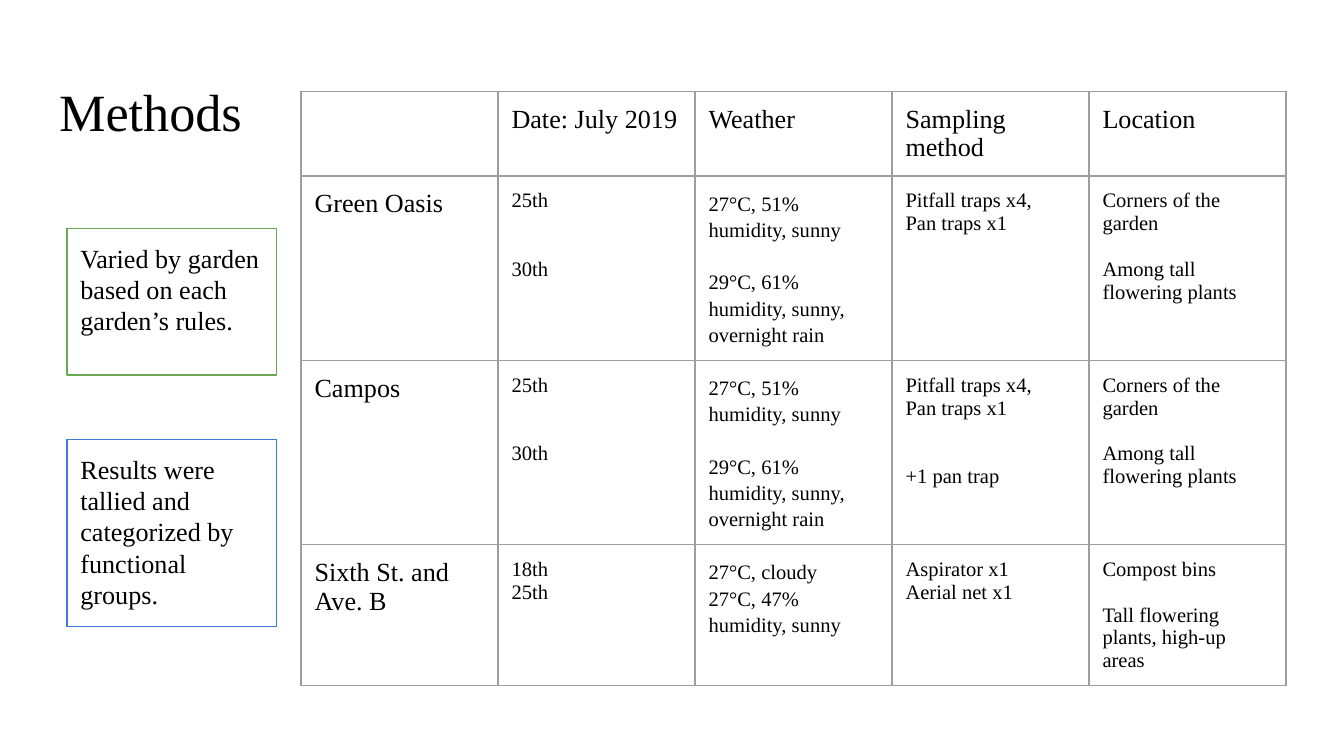
"""Build the Methods slide: a title, two notes and a table of garden sampling."""
from lxml import etree
from pptx import Presentation
from pptx import util as u
from pptx.dml.color import RGBColor
from pptx.enum import shapes, text
from pptx.oxml import ns

FONT = "Times New Roman"
BLACK = RGBColor(0x00, 0x00, 0x00)
GRAY = RGBColor(0x9E, 0x9E, 0x9E)
GREEN = RGBColor(0x6A, 0xA8, 0x4F)
BLUE = RGBColor(0x3C, 0x78, 0xD8)

TITLE = "Methods"
NOTES = [
    ("Varied by garden based on each garden’s rules.", 1.7, 1.09, GREEN),
    ("Results were tallied and categorized by functional groups.", 3.27, 1.39, BLUE),
]
HEADERS = ["", "Date: July 2019", "Weather", "Sampling method", "Location"]
DATES = [("25th", 0), ("30th", 2)]
WEATHER = [("27°C, 51% humidity, sunny", 0), ("29°C, 61% humidity, sunny, overnight rain", 1)]
TRAPS = [("Pitfall traps x4,", 0), ("Pan traps x1", 0)]
PLACES = [("Corners of the garden", 0), ("Among tall flowering plants", 1)]
GARDENS = [
    ("Green Oasis", DATES, WEATHER, TRAPS, PLACES),
    ("Campos", DATES, WEATHER, TRAPS + [("+1 pan trap", 2)], PLACES),
    (
        "Sixth St. and Ave. B",
        [("18th", 0), ("25th", 0)],
        [("27°C, cloudy", 0), ("27°C, 47% humidity, sunny", 0)],
        [("Aspirator x1", 0), ("Aerial net x1", 0)],
        [("Compost bins", 0), ("Tall flowering plants, high-up areas", 1)],
    ),
]
SLIDE_WIDTH = 10
SLIDE_HEIGHT = SLIDE_WIDTH * 9 / 16
TABLE_WIDTH = 7.33
ROW_HEIGHTS = [0.54, 1.3, 1.3, 0.73]
WEATHER_COLUMN = 2
LINE_RATIO = 1.11


def write(frame, content, size=14, spacing=1.0):
    """Write a string, or (string, skipped lines) pairs, as paragraphs."""
    lines = [(content, 0)] if isinstance(content, str) else content
    for index, (words, skipped) in enumerate(lines):
        paragraph = frame.add_paragraph() if index else frame.paragraphs[0]
        paragraph.alignment = text.PP_ALIGN.LEFT
        paragraph.line_spacing = spacing
        paragraph.space_before = u.Pt(round(skipped * size * LINE_RATIO * spacing, 1))
        run = paragraph.add_run()
        run.text = words
        run.font.name = FONT
        run.font.size = u.Pt(size)
        run.font.color.rgb = BLACK


def set_margins(target):
    for side in ("left", "top", "right", "bottom"):
        setattr(target, f"margin_{side}", u.Inches(0.1))


def set_borders(cell):
    properties = cell._tc.get_or_add_tcPr()
    for index, side in enumerate(("lnL", "lnR", "lnT", "lnB")):
        line = etree.Element(ns.qn(f"a:{side}"), w=str(u.Pt(0.75)))
        fill = etree.SubElement(line, ns.qn("a:solidFill"))
        etree.SubElement(fill, ns.qn("a:srgbClr"), val=str(GRAY))
        properties.insert(index, line)


def add_title(slide):
    title = slide.shapes.title
    title.left, title.top = u.Inches(0.34), u.Inches(0.49)
    title.width, title.height = u.Inches(9.32), u.Inches(0.63)
    frame = title.text_frame
    set_margins(frame)
    frame.vertical_anchor = text.MSO_ANCHOR.TOP
    write(frame, TITLE, size=28)


def add_note(slide, words, top, height, color):
    note = slide.shapes.add_shape(
        shapes.MSO_SHAPE.RECTANGLE,
        u.Inches(0.5), u.Inches(top), u.Inches(1.56), u.Inches(height),
    )
    note.shadow.inherit = False
    note.fill.background()
    note.line.color.rgb = color
    note.line.width = u.Pt(0.75)
    frame = note.text_frame
    frame.word_wrap = True
    frame.vertical_anchor = text.MSO_ANCHOR.TOP
    set_margins(frame)
    write(frame, words)


def add_garden_table(slide):
    rows = [HEADERS, *GARDENS]
    table = slide.shapes.add_table(
        len(rows), len(HEADERS), u.Inches(2.24), u.Inches(0.68),
        u.Inches(TABLE_WIDTH), u.Inches(sum(ROW_HEIGHTS)),
    ).table
    table.first_row = table.horz_banding = False
    for row_index, (values, height) in enumerate(zip(rows, ROW_HEIGHTS)):
        table.rows[row_index].height = u.Inches(height)
        for column_index, value in enumerate(values):
            cell = table.cell(row_index, column_index)
            set_margins(cell)
            cell.fill.background()
            set_borders(cell)
            heading = isinstance(value, str)
            loose = column_index == WEATHER_COLUMN and not heading
            if value:
                write(cell.text_frame, value, size=14 if heading else 11,
                      spacing=1.15 if loose else 1.0)


def main():
    presentation = Presentation()
    presentation.slide_width = u.Inches(SLIDE_WIDTH)
    presentation.slide_height = u.Inches(SLIDE_HEIGHT)
    slide = presentation.slides.add_slide(presentation.slide_layouts.get_by_name("Title Only"))
    add_title(slide)
    add_garden_table(slide)
    for note in NOTES:
        add_note(slide, *note)
    presentation.save("out.pptx")


if __name__ == "__main__":
    main()
